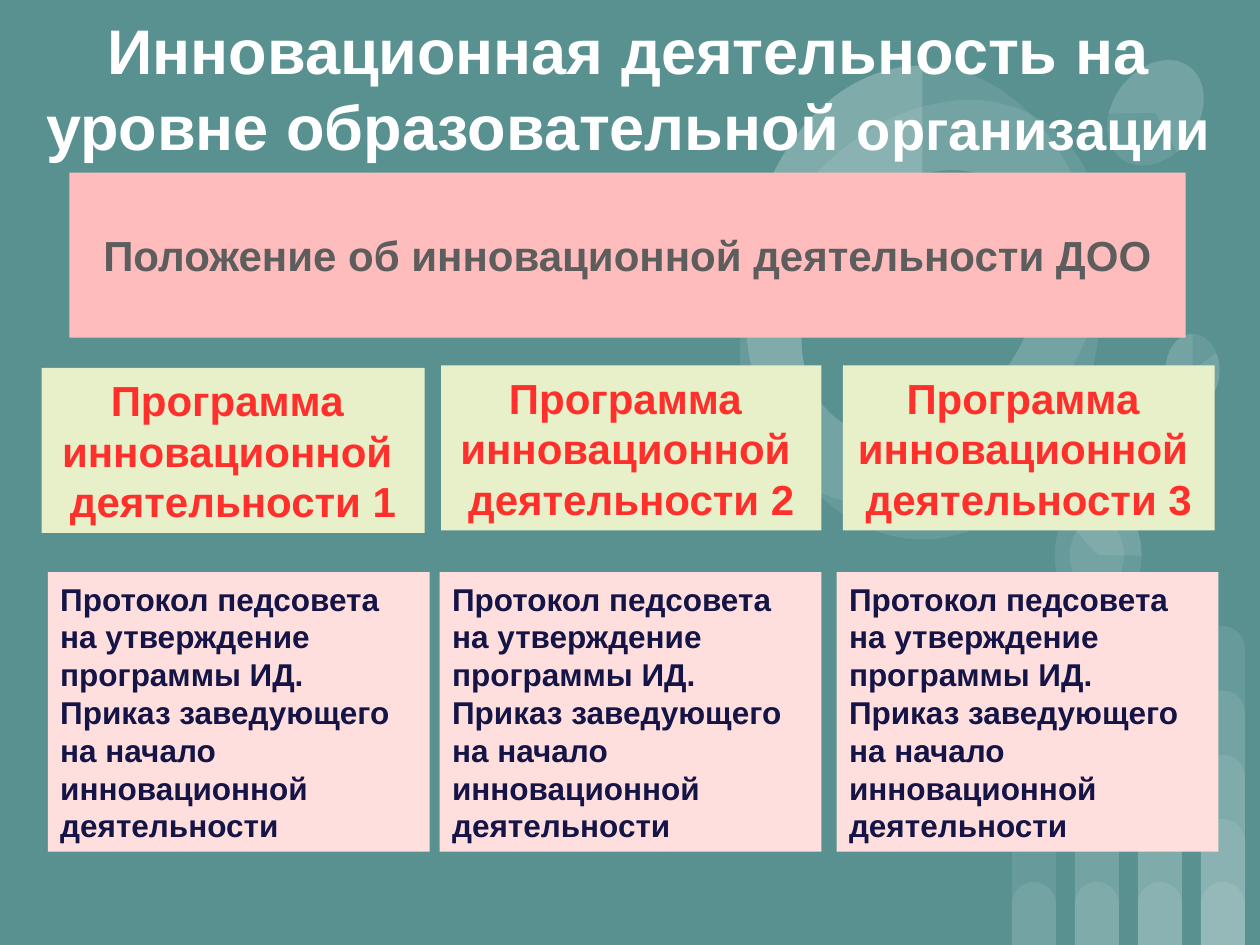
from dataclasses import dataclass

from lxml import etree
from pptx import Presentation
from pptx.dml.color import RGBColor
from pptx.enum import shapes, text
from pptx.oxml.ns import qn
from pptx.util import Inches, Pt


@dataclass(frozen=True)
class Theme:
    font: str = "Arial"
    background: str = "599191"
    white: str = "FFFFFF"
    veil_alpha: int = 9
    banner_fill: str = "FEBDBC"
    banner_text: str = "5D5D5D"
    program_fill: str = "E7F0C8"
    program_text: str = "FF2F2C"
    protocol_fill: str = "FFDEDE"
    protocol_text: str = "141446"
    title_size: int = 36
    title_small: int = 32
    heading_size: int = 24
    body_size: int = 18
    leading: float = 1.2


THEME = Theme()
KIND = shapes.MSO_SHAPE
ALIGN = text.PP_ALIGN

TITLE = [
    ("Инновационная деятельность на уровне образовательной ", THEME.title_size),
    ("организации", THEME.title_small),
]
BANNER = ["Положение об инновационной деятельности ДОО"]
PROGRAM = ["Программа ", "инновационной ", "деятельности {}"]
PROTOCOL = [
    "Протокол педсовета на утверждение программы ИД.",
    "Приказ заведующего на начало инновационной деятельности",
]

# Places are left, top, width, height in inches
TITLE_PLACE = (0.25, -0.04, 9.47, 1.47)
BANNER_PLACE = (0.55, 1.37, 8.86, 1.31)
PROGRAM_PLACES = [(0.33, 2.92, 3.04, 1.31), (3.5, 2.9, 3.02, 1.31), (6.69, 2.9, 2.95, 1.31)]
PROTOCOL_PLACES = [(left, 4.54, 3.03, 2.22) for left in (0.38, 3.49, 6.64)]

# Background bars: each column holds one more overlapping bar than the last
BAR_LEFT, BAR_PITCH, BAR_WIDTH = 8.03, 0.5, 0.35
BAR_HEIGHTS = [0.5, 1, 1.51, 2.02, 2.53]
BAR_COLUMNS = 4
PAGE_WIDTH, PAGE_HEIGHT = 10, 7.5

# Background rings: place, rotation, pie angles (empty for an ellipse)
SMALL = (9.25, 2.65, 0.43, 0.58)
LOWER = (8.25, 4.06, 0.93, 0.69)
UPPER = (8.83, 0.44, 0.68, 0.91)
LARGE = (5.91, 0.52, 2.82, 3.76)
HOLE = (6.46, 1.27, 1.7, 2.27)
RINGS = [
    (SMALL, 0, ()),
    (LOWER, 90, ()),
    (LOWER, 90, (82.45, 162.46)),
    ((8.42, 4.19, 0.57, 0.43), 90, ()),
    (SMALL, 0, (193.77, 162)),
    (UPPER, 215.9, ()),
    (UPPER, 215.9, (193.77, 123.14)),
    (LARGE, 0, ()),
    ((6.02, 0.67, 2.59, 3.45), 34.1, ()),
    (LARGE, 0, (88.01, 162)),
    (HOLE, 34.1, ()),
    (LARGE, 0, (125.54, 162)),
]


def add_block(page, kind, place, fill, alpha=None, rotation=0, adjustments=()):
    block = page.shapes.add_shape(kind, *map(Inches, place))
    block.shadow.inherit = False
    block.line.fill.background()
    block.fill.solid()
    block.fill.fore_color.rgb = RGBColor.from_string(fill)
    if alpha is not None:
        color = block.fill._xPr.find(qn("a:solidFill"))[0]
        etree.SubElement(color, qn("a:alpha"), val=str(alpha * 1000))
    block.rotation = rotation
    for index, value in enumerate(adjustments):
        block.adjustments[index] = value
    return block


def add_span(para, words, size, color):
    span = para.add_run()
    span.text = words
    span.font.name = THEME.font
    span.font.size = Pt(size)
    span.font.bold = True
    span.font.color.rgb = RGBColor.from_string(color)


def set_paragraph(para, align, size):
    para.alignment = align
    para.line_spacing = Pt(size * THEME.leading)
    para.space_before = para.space_after = Pt(0)


def add_text_block(page, place, fill, lines, size, color, align=ALIGN.CENTER, wrap=True):
    block = add_block(page, KIND.RECTANGLE, place, fill)
    frame = block.text_frame
    frame.word_wrap = wrap
    frame.vertical_anchor = text.MSO_ANCHOR.MIDDLE
    for index, line in enumerate(lines):
        para = frame.add_paragraph() if index else frame.paragraphs[0]
        set_paragraph(para, align, size)
        add_span(para, line, size, color)


def add_backdrop(page):
    page.background.fill.solid()
    page.background.fill.fore_color.rgb = RGBColor.from_string(THEME.background)
    for column in range(BAR_COLUMNS):
        for height in BAR_HEIGHTS[:column + 2]:
            place = (BAR_LEFT + column * BAR_PITCH, PAGE_HEIGHT - height, BAR_WIDTH, height)
            add_block(page, KIND.ROUND_2_SAME_RECTANGLE, place, THEME.white,
                      THEME.veil_alpha, adjustments=(0.5, 0))
    for place, rotation, angles in RINGS:
        kind = KIND.PIE if angles else KIND.OVAL
        fill, alpha = (THEME.white, THEME.veil_alpha)
        if place == HOLE:
            fill, alpha = (THEME.background, None)
        add_block(page, kind, place, fill, alpha, rotation, angles)


def place_title(page):
    """Format the title and lift it above the backdrop."""
    title = page.shapes.title
    title.left, title.top, title.width, title.height = map(Inches, TITLE_PLACE)
    frame = title.text_frame
    frame.word_wrap = True
    frame.auto_size = text.MSO_AUTO_SIZE.NONE
    frame.vertical_anchor = text.MSO_ANCHOR.MIDDLE
    frame.margin_left = frame.margin_right = Inches(0.1)
    frame.margin_top = frame.margin_bottom = Inches(0.1)
    para = frame.paragraphs[0]
    set_paragraph(para, ALIGN.CENTER, THEME.title_size)
    for words, size in TITLE:
        add_span(para, words, size, THEME.white)
    page.shapes._spTree.append(title._element)


def main():
    deck = Presentation()
    deck.slide_width, deck.slide_height = Inches(PAGE_WIDTH), Inches(PAGE_HEIGHT)
    page = deck.slides.add_slide(deck.slide_layouts.get_by_name("Title Only"))
    add_backdrop(page)
    place_title(page)
    add_text_block(page, BANNER_PLACE, THEME.banner_fill, BANNER,
                   THEME.heading_size, THEME.banner_text)
    for number, place in enumerate(PROGRAM_PLACES, start=1):
        lines = [line.format(number) for line in PROGRAM]
        add_text_block(page, place, THEME.program_fill, lines,
                       THEME.heading_size, THEME.program_text, wrap=False)
    for place in PROTOCOL_PLACES:
        add_text_block(page, place, THEME.protocol_fill, PROTOCOL,
                       THEME.body_size, THEME.protocol_text, ALIGN.LEFT)
    deck.save("out.pptx")


if __name__ == "__main__":
    main()
